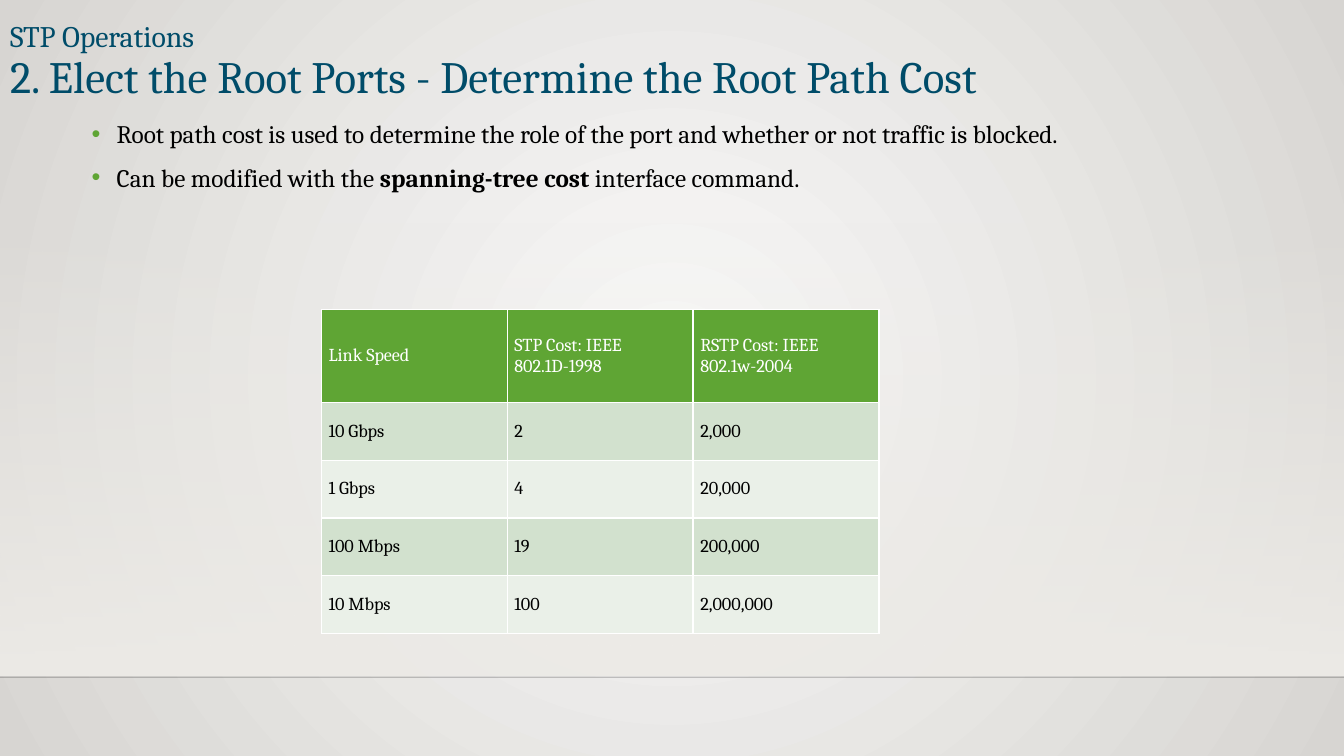
import pptx
import pptx.dml.color
import pptx.enum.shapes
import pptx.enum.text
import pptx.oxml
import pptx.oxml.ns
import pptx.util

Pt = pptx.util.Pt
RGBColor = pptx.dml.color.RGBColor
qn = pptx.oxml.ns.qn

FONT = "Cambria"
NAVY = RGBColor(0x00, 0x4C, 0x69)
BLACK = RGBColor(0x00, 0x00, 0x00)
WHITE = RGBColor(0xFF, 0xFF, 0xFF)
GREEN = RGBColor(0x5F, 0xA5, 0x34)
DARK_BAND = RGBColor(0xD2, 0xE1, 0xCE)
LIGHT_BAND = RGBColor(0xEA, 0xF0, 0xE8)
BACKGROUND_CENTER = RGBColor(0xFA, 0xFA, 0xF9)
BACKGROUND_EDGE = RGBColor(0xD7, 0xD5, 0xD2)
WALL = RGBColor(0xED, 0xEB, 0xE7)
HORIZON = RGBColor(0x00, 0x00, 0x01)

SLIDE_WIDTH = 960
HORIZON_TOP = 483.8
NAMESPACE = pptx.oxml.ns.nsdecls("a")


def add_xml(parent, tag, attributes="", content=""):
    element = pptx.oxml.parse_xml(f"<a:{tag} {NAMESPACE} {attributes}>{content}</a:{tag}>")
    parent.append(element)


def set_gradient(fill, first_color, last_color):
    fill.gradient()
    for stop, color, position in zip(fill.gradient_stops, (first_color, last_color), (0, 1)):
        stop.color.rgb = color
        stop.position = position


presentation = pptx.Presentation()
presentation.slide_width = Pt(SLIDE_WIDTH)
presentation.slide_height = Pt(540)
slide = presentation.slides.add_slide(presentation.slide_layouts[5])

# Background: radial gradient, wall fading in towards the horizon line
set_gradient(slide.background.fill, BACKGROUND_CENTER, BACKGROUND_EDGE)
gradient = next(slide.element.iter(qn("a:gradFill")))
gradient.remove(gradient.find(qn("a:lin")))
add_xml(gradient, "path", 'path="circle"', '<a:fillToRect l="50000" t="50000" r="50000" b="50000"/>')

wall = slide.shapes.add_shape(
    pptx.enum.shapes.MSO_SHAPE.RECTANGLE, 0, Pt(158.4), Pt(SLIDE_WIDTH), Pt(324))
wall.shadow.inherit = False
wall.line.fill.background()
set_gradient(wall.fill, WALL, WALL)
wall.fill.gradient_angle = 270
add_xml(next(wall.element.iter(qn("a:srgbClr"))), "alpha", 'val="0"')

horizon = slide.shapes.add_connector(
    pptx.enum.shapes.MSO_CONNECTOR.STRAIGHT, 0, Pt(HORIZON_TOP), Pt(SLIDE_WIDTH), Pt(HORIZON_TOP))
horizon.line.width = Pt(1)
horizon.line.color.rgb = HORIZON
add_xml(next(horizon.element.iter(qn("a:srgbClr"))), "alpha", 'val="20000"')
add_xml(horizon.element.spPr, "effectLst")

# Title
title = slide.shapes.title
title.left, title.top, title.width, title.height = 0, 0, Pt(876.2), Pt(77)
title.text_frame.vertical_anchor = pptx.enum.text.MSO_ANCHOR.BOTTOM
title.text_frame.auto_size = pptx.enum.text.MSO_AUTO_SIZE.NONE
paragraph = title.text_frame.paragraphs[0]
paragraph.alignment = pptx.enum.text.PP_ALIGN.LEFT
paragraph.line_spacing = 0.9
paragraph.font.name = FONT
paragraph.font.color.rgb = NAVY
topic = paragraph.add_run()
topic.text = "STP Operations"
topic.font.size = Pt(21.3)
paragraph.add_line_break()
heading = paragraph.add_run()
heading.text = "2. Elect the Root Ports - Determine the Root Path Cost"
heading.font.size = Pt(32)

# Bullets, each a list of (text, bold) pieces
bullets = [
    [("Root path cost is used to determine the role of the port and whether or not traffic is blocked.", False)],
    [("Can be modified with the ", False), ("spanning-tree cost ", True), ("interface command.", False)],
]
body = slide.shapes.add_textbox(Pt(22.3), Pt(77), Pt(897.1), Pt(215.3))
body.text_frame.word_wrap = True
for index, pieces in enumerate(bullets):
    paragraph = body.text_frame.add_paragraph() if index else body.text_frame.paragraphs[0]
    paragraph.line_spacing = 1.2
    if index:
        paragraph.space_before = Pt(5)
    properties = paragraph._p.get_or_add_pPr()
    properties.set("marL", str(Pt(54)))
    properties.set("indent", str(Pt(-18)))
    add_xml(properties, "buClr", content=f'<a:srgbClr val="{GREEN}"/>')
    add_xml(properties, "buFont", 'typeface="Arial"')
    add_xml(properties, "buChar", 'char="•"')
    paragraph.font.name = FONT
    paragraph.font.size = Pt(18)
    paragraph.font.color.rgb = BLACK
    for text, bold in pieces:
        run = paragraph.add_run()
        run.text = text
        if bold:
            run.font.bold = True

# Cost table
costs = [
    ("Link Speed", "STP Cost: IEEE 802.1D-1998", "RSTP Cost: IEEE 802.1w-2004"),
    ("10 Gbps", "2", "2,000"),
    ("1 Gbps", "4", "20,000"),
    ("100 Mbps", "19", "200,000"),
    ("10 Mbps", "100", "2,000,000"),
]
table = slide.shapes.add_table(
    len(costs), len(costs[0]), Pt(229.5), Pt(221), Pt(398.4), Pt(231.4)).table
for column in table.columns:
    column.width = Pt(132.8)
for row_index, values in enumerate(costs):
    is_header = row_index == 0
    table.rows[row_index].height = Pt(66.6 if is_header else 41.2)
    for column_index, value in enumerate(values):
        cell = table.cell(row_index, column_index)
        cell.text = value
        cell.vertical_anchor = pptx.enum.text.MSO_ANCHOR.MIDDLE
        cell.margin_left = cell.margin_right = cell.margin_top = cell.margin_bottom = Pt(5.2)
        for side in "LRTB":
            add_xml(cell._tc.get_or_add_tcPr(), f"ln{side}", f'w="{Pt(1)}"',
                    f'<a:solidFill><a:srgbClr val="{WHITE}"/></a:solidFill>')
        cell.fill.solid()
        cell.fill.fore_color.rgb = GREEN if is_header else DARK_BAND if row_index % 2 else LIGHT_BAND
        font = cell.text_frame.paragraphs[0].font
        font.name = FONT
        font.size = Pt(13)
        font.bold = False
        font.color.rgb = WHITE if is_header else BLACK

presentation.save("out.pptx")
